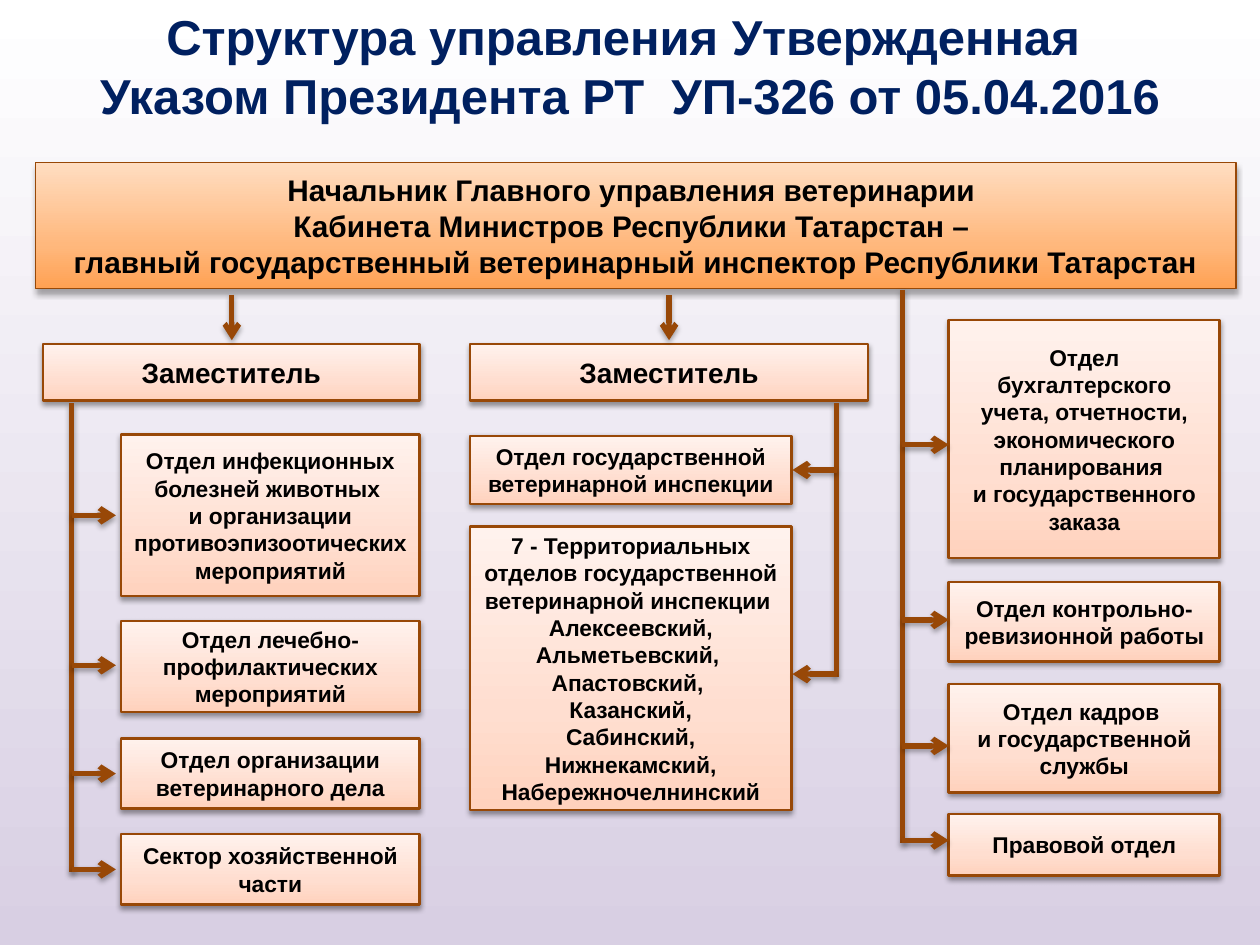
from copy import deepcopy

from lxml.etree import SubElement
from pptx import Presentation
from pptx.dml.color import RGBColor
from pptx.enum.shapes import MSO_CONNECTOR as Connector, MSO_SHAPE as Shape
from pptx.enum.text import MSO_ANCHOR as Anchor, PP_ALIGN as Align
from pptx.oxml.ns import qn
from pptx.util import Inches, Pt

BROWN = "984807"
PEACH = ((0, "FFD2BD"), (0.35, "FFDED0"), (1, "FFF2ED"))
ORANGE = ((0, "FFA153"), (0.35, "FFB87D"), (1, "FFDDC1"))
LAVENDER = ((0, "D8CFE3"), (1, "FFFFFF"))


def color(value):
    return RGBColor.from_string(value)


class StructureSlide:
    def __init__(self, slide, font_name="Arial"):
        self.slide = slide
        self.font_name = font_name

    def label(self, shape, text, size, text_color="000000"):
        frame = shape.text_frame
        frame.text = text
        frame.word_wrap = True
        frame.vertical_anchor = Anchor.MIDDLE
        style = {"name": self.font_name, "size": Pt(size), "bold": True}
        for paragraph in frame.paragraphs:
            paragraph.alignment = Align.CENTER
            for run in paragraph.runs:
                for key, value in style.items():
                    setattr(run.font, key, value)
                run.font.color.rgb = color(text_color)

    def title(self, text, place):
        shape = self.slide.shapes.add_textbox(*map(Inches, place))
        self.label(shape, text, 28, "002060")

    def panel(self, place, stops):
        shape = self.slide.shapes.add_shape(Shape.RECTANGLE, *map(Inches, place))
        shape.shadow.inherit = False
        shape.line.fill.background()
        shape.fill.gradient()
        shape.fill.gradient_angle = 90
        stop_list = shape._element.spPr.find(".//" + qn("a:gsLst"))
        for _ in range(len(stops) - 2):
            stop_list.append(deepcopy(stop_list[0]))
        for stop, (position, value) in zip(shape.fill.gradient_stops, stops):
            stop.position = position
            stop.color.rgb = color(value)
        return shape

    def box(self, place, text, size=13, stops=PEACH, width=1.5, shadow=(38, 3.1, 1.6)):
        shape = self.panel(place, stops)
        shape.line.color.rgb = color(BROWN)
        shape.line.width = Pt(width)
        self.cast_shadow(shape._element.spPr.find(qn("a:effectLst")), *shadow)
        self.label(shape, text, size)

    def line(self, start, end, arrow=True):
        points = map(Inches, (*start, *end))
        connector = self.slide.shapes.add_connector(Connector.STRAIGHT, *points)
        connector.line.color.rgb = color(BROWN)
        connector.line.width = Pt(3)
        properties = connector._element.spPr
        if arrow:
            SubElement(properties.find(qn("a:ln")), qn("a:tailEnd"), type="arrow")
        self.cast_shadow(SubElement(properties, qn("a:effectLst")), 35, 3.1, 1.8)

    def cast_shadow(self, effects, opacity, blur, distance):
        outer = SubElement(effects, qn("a:outerShdw"), blurRad=str(int(Pt(blur))),
                           dist=str(int(Pt(distance))), dir="5400000", rotWithShape="0")
        shade = SubElement(outer, qn("a:srgbClr"), val="000000")
        SubElement(shade, qn("a:alpha"), val=str(opacity * 1000))

    def department_column(self, left, width, departments):
        for top, height, text in departments:
            self.box((left, top, width, height), text)

    def branches(self, trunk, top, tip, levels):
        self.line((trunk, top), (trunk, levels[-1] + 0.02), arrow=False)
        for level in levels:
            self.line((trunk, level), (tip, level))


def main():
    presentation = Presentation()
    presentation.slide_width, presentation.slide_height = Inches(10), Inches(7.5)
    structure = StructureSlide(presentation.slides.add_slide(presentation.slide_layouts[6]))

    structure.panel((0, 0, 10, 7.5), LAVENDER)
    structure.title("Структура управления Утвержденная \v"
                    "Указом Президента РТ  УП-326 от 05.04.2016", (0, 0.01, 10, 1.02))
    for left, width in ((0.34, 2.99), (3.73, 3.16)):
        structure.box((left, 2.73, width, 0.45), "Заместитель", 16)

    structure.department_column(0.96, 2.37, (
        (3.45, 1.28, "Отдел инфекционных болезней животных \n"
                     "и организации противоэпизоотических мероприятий"),
        (4.93, 0.72, "Отдел лечебно- профилактических мероприятий"),
        (5.86, 0.56, "Отдел организации ветеринарного дела"),
        (6.62, 0.56, "Сектор хозяйственной части"),
    ))
    structure.department_column(3.73, 2.55, (
        (3.46, 0.54, "Отдел государственной ветеринарной инспекции"),
        (4.18, 2.25, "7 - Территориальных отделов государственной ветеринарной инспекции \n"
                     "Алексеевский,\nАльметьевский, \nАпастовский, \nКазанский,\n"
                     "Сабинский, Нижнекамский, Набережночелнинский"),
    ))
    structure.department_column(7.53, 2.15, (
        (2.54, 1.89, "Отдел бухгалтерского учета, отчетности, экономического "
                     "планирования \vи государственного заказа"),
        (4.62, 0.63, "Отдел контрольно-ревизионной работы"),
        (5.43, 0.86, "Отдел кадров \vи государственной службы"),
        (6.46, 0.49, "Правовой отдел"),
    ))
    structure.box((0.28, 1.29, 9.53, 1),
                  "Начальник Главного управления ветеринарии \n"
                  "Кабинета Министров Республики Татарстан – \n"
                  "главный государственный ветеринарный инспектор Республики Татарстан",
                  17, ORANGE, 0.75, (32, 3.5, 2.2))

    for center in (1.84, 5.31):
        structure.line((center, 2.34), (center, 2.7))
    structure.branches(0.57, 3.2, 0.92, (4.09, 5.28, 6.14, 6.9))
    structure.branches(6.64, 3.2, 6.29, (3.73, 5.35))
    structure.branches(7.16, 2.3, 7.53, (3.53, 4.92, 5.92, 6.67))
    presentation.save("out.pptx")


if __name__ == "__main__":
    main()
